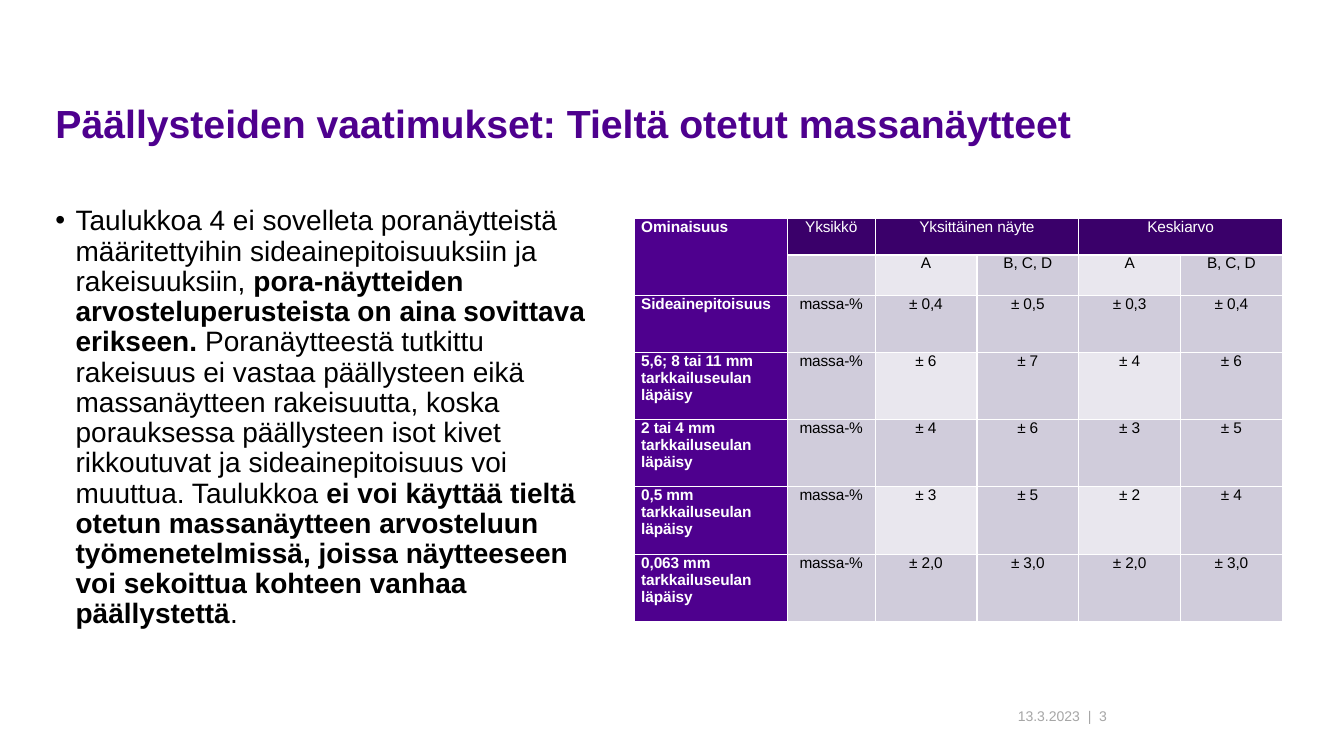
"""Build the slide on requirements for mix samples taken from the road."""
from dataclasses import dataclass

from lxml import etree
from pptx import Presentation
from pptx.dml.color import RGBColor
from pptx.enum.text import MSO_ANCHOR, MSO_AUTO_SIZE, PP_ALIGN
from pptx.oxml.ns import qn
from pptx.util import Inches, Pt

LEFT, CENTER, RIGHT = PP_ALIGN.LEFT, PP_ALIGN.CENTER, PP_ALIGN.RIGHT
TOP, BOTTOM = MSO_ANCHOR.TOP, MSO_ANCHOR.BOTTOM
NO_AUTOFIT = MSO_AUTO_SIZE.NONE

PURPLE = RGBColor(0x4E, 0x00, 0x8E)
DARK_PURPLE = RGBColor(0x3A, 0x00, 0x6A)
LAVENDER = RGBColor(0xD0, 0xCC, 0xDB)
PALE_LAVENDER = RGBColor(0xE9, 0xE7, 0xEE)
GRAY = RGBColor(0xA6, 0xA6, 0xA6)
BLACK = RGBColor(0x00, 0x00, 0x00)
WHITE = RGBColor(0xFF, 0xFF, 0xFF)

FONT = "Arial"
TITLE = "Päällysteiden vaatimukset: Tieltä otetut massanäytteet"


@dataclass(frozen=True)
class BodyPart:
    text: str
    bold: bool = False


@dataclass(frozen=True)
class FooterItem:
    text: str
    left: float
    width: float
    alignment: PP_ALIGN
    margin_right: float


BODY_PARTS = [
    BodyPart("Taulukkoa 4 ei sovelleta poranäytteistä määritettyihin "
             "sideainepitoisuuksiin ja rakeisuuksiin, "),
    BodyPart("pora-näytteiden arvosteluperusteista on aina sovittava erikseen.", True),
    BodyPart(" Poranäytteestä tutkittu rakeisuus ei vastaa päällysteen eikä "
             "massanäytteen rakeisuutta, koska porauksessa päällysteen isot kivet "
             "rikkoutuvat ja sideainepitoisuus voi muuttua. Taulukkoa "),
    BodyPart("ei voi käyttää tieltä otetun massanäytteen arvosteluun työmenetelmissä, "
             "joissa näytteeseen voi sekoittua kohteen vanhaa päällystettä", True),
    BodyPart("."),
]
FOOTER_ITEMS = [
    FooterItem("13.3.2023", 9.87, 0.84, RIGHT, 0),
    FooterItem("|\t3", 10.79, 0.41, LEFT, 0.1),
]

COLUMN_WIDTHS = [1.52, 0.87] + [1.01] * 4
ROW_HEIGHTS = [0.36, 0.4, 0.57, 0.66] + [0.67] * 3
TABLE_ROWS = [
    ["Ominaisuus", "Yksikkö", "Yksittäinen näyte", "", "Keskiarvo", ""],
    ["", "", "A", "B, C, D", "A", "B, C, D"],
    ["Sideainepitoisuus", "massa-%", "± 0,4", "± 0,5", "± 0,3", "± 0,4"],
    ["5,6; 8 tai 11 mm tarkkailuseulan läpäisy", "massa-%", "± 6", "± 7", "± 4", "± 6"],
    ["2 tai 4 mm tarkkailuseulan läpäisy", "massa-%", "± 4", "± 6", "± 3", "± 5"],
    ["0,5 mm tarkkailuseulan läpäisy", "massa-%", "± 3", "± 5", "± 2", "± 4"],
    ["0,063 mm tarkkailuseulan läpäisy", "massa-%", "± 2,0", "± 3,0", "± 2,0", "± 3,0"],
]


def place(shape, left: float, top: float, width: float, height: float) -> None:
    shape.left, shape.top = Inches(left), Inches(top)
    shape.width, shape.height = Inches(width), Inches(height)


def format_font(font, size: float, color: RGBColor, bold: bool = False) -> None:
    font.name, font.size, font.bold = FONT, Pt(size), bold
    font.color.rgb = color


def add_title(slide) -> None:
    title = slide.shapes.title
    place(title, 0.45, 0.99, 11.65, 0.71)
    frame = title.text_frame
    frame.text = TITLE
    frame.auto_size, frame.vertical_anchor = NO_AUTOFIT, TOP
    paragraph = frame.paragraphs[0]
    paragraph.alignment, paragraph.line_spacing = LEFT, 0.9
    format_font(paragraph.runs[0].font, 28, PURPLE, True)


def add_body(slide) -> None:
    body = slide.placeholders[1]
    place(body, 0.45, 2, 5.67, 4.76)
    frame = body.text_frame
    frame.auto_size, frame.vertical_anchor = NO_AUTOFIT, TOP
    paragraph = frame.paragraphs[0]
    paragraph.line_spacing, paragraph.space_before = 0.9, Pt(0)
    properties = paragraph._p.get_or_add_pPr()
    properties.set("marL", str(Inches(0.2)))
    properties.set("indent", str(Inches(-0.2)))
    etree.SubElement(properties, qn("a:buFont"), typeface=FONT)
    etree.SubElement(properties, qn("a:buChar"), char="•")
    for part in BODY_PARTS:
        run = paragraph.add_run()
        run.text = part.text
        format_font(run.font, 20, BLACK, part.bold)


def add_footer_item(slide, item: FooterItem) -> None:
    box = slide.shapes.add_textbox(Inches(item.left), Inches(6.96),
                                   Inches(item.width), Inches(0.28))
    frame = box.text_frame
    frame.word_wrap, frame.vertical_anchor = True, BOTTOM
    frame.margin_left, frame.margin_right = 0, Inches(item.margin_right)
    frame.text = item.text
    paragraph = frame.paragraphs[0]
    paragraph.alignment = item.alignment
    if "\t" in item.text:
        tabs = etree.SubElement(paragraph._p.get_or_add_pPr(), qn("a:tabLst"))
        etree.SubElement(tabs, qn("a:tab"), pos=str(Inches(0.11)), algn="l")
    format_font(paragraph.runs[0].font, 10, GRAY)


def cell_fill(row: int, column: int) -> RGBColor:
    if column == 0:
        return PURPLE
    if row == 0:
        return DARK_PURPLE
    return PALE_LAVENDER if row % 2 and column in (2, 4) else LAVENDER


def add_borders(cell) -> None:
    properties = cell._tc.get_or_add_tcPr()
    for side in ("a:lnL", "a:lnR", "a:lnT", "a:lnB"):
        line = etree.SubElement(properties, qn(side), w=str(Pt(1)))
        solid_fill = etree.SubElement(line, qn("a:solidFill"))
        etree.SubElement(solid_fill, qn("a:srgbClr"), val=str(WHITE))


def format_cell(cell, text: str, row: int, column: int) -> None:
    add_borders(cell)
    cell.fill.solid()
    cell.fill.fore_color.rgb = cell_fill(row, column)
    cell.margin_left = cell.margin_right = Inches(0.07)
    cell.margin_top = cell.margin_bottom = 0
    cell.vertical_anchor = TOP
    if not text:
        return
    cell.text_frame.text = text
    paragraph = cell.text_frame.paragraphs[0]
    paragraph.alignment = LEFT if column == 0 else CENTER
    run = paragraph.runs[0]
    format_font(run.font, 11, WHITE if 0 in (row, column) else BLACK, column == 0)
    run.font._element.set("spc", "-10")


def add_tolerance_table(slide) -> None:
    table = slide.shapes.add_table(
        len(ROW_HEIGHTS), len(COLUMN_WIDTHS), Inches(6.29), Inches(2.17),
        Inches(sum(COLUMN_WIDTHS)), Inches(sum(ROW_HEIGHTS))).table
    for column, width in zip(table.columns, COLUMN_WIDTHS):
        column.width = Inches(width)
    for row, height in zip(table.rows, ROW_HEIGHTS):
        row.height = Inches(height)
    for row_index, texts in enumerate(TABLE_ROWS):
        for column_index, text in enumerate(texts):
            format_cell(table.cell(row_index, column_index), text, row_index, column_index)
    table.cell(0, 0).merge(table.cell(1, 0))
    for first in (2, 4):
        table.cell(0, first).merge(table.cell(0, first + 1))


def main() -> None:
    presentation = Presentation()
    presentation.slide_width, presentation.slide_height = Inches(13.33), Inches(7.5)
    slide = presentation.slides.add_slide(presentation.slide_layouts[1])
    add_title(slide)
    add_body(slide)
    for item in FOOTER_ITEMS:
        add_footer_item(slide, item)
    add_tolerance_table(slide)
    presentation.save("out.pptx")


if __name__ == "__main__":
    main()
